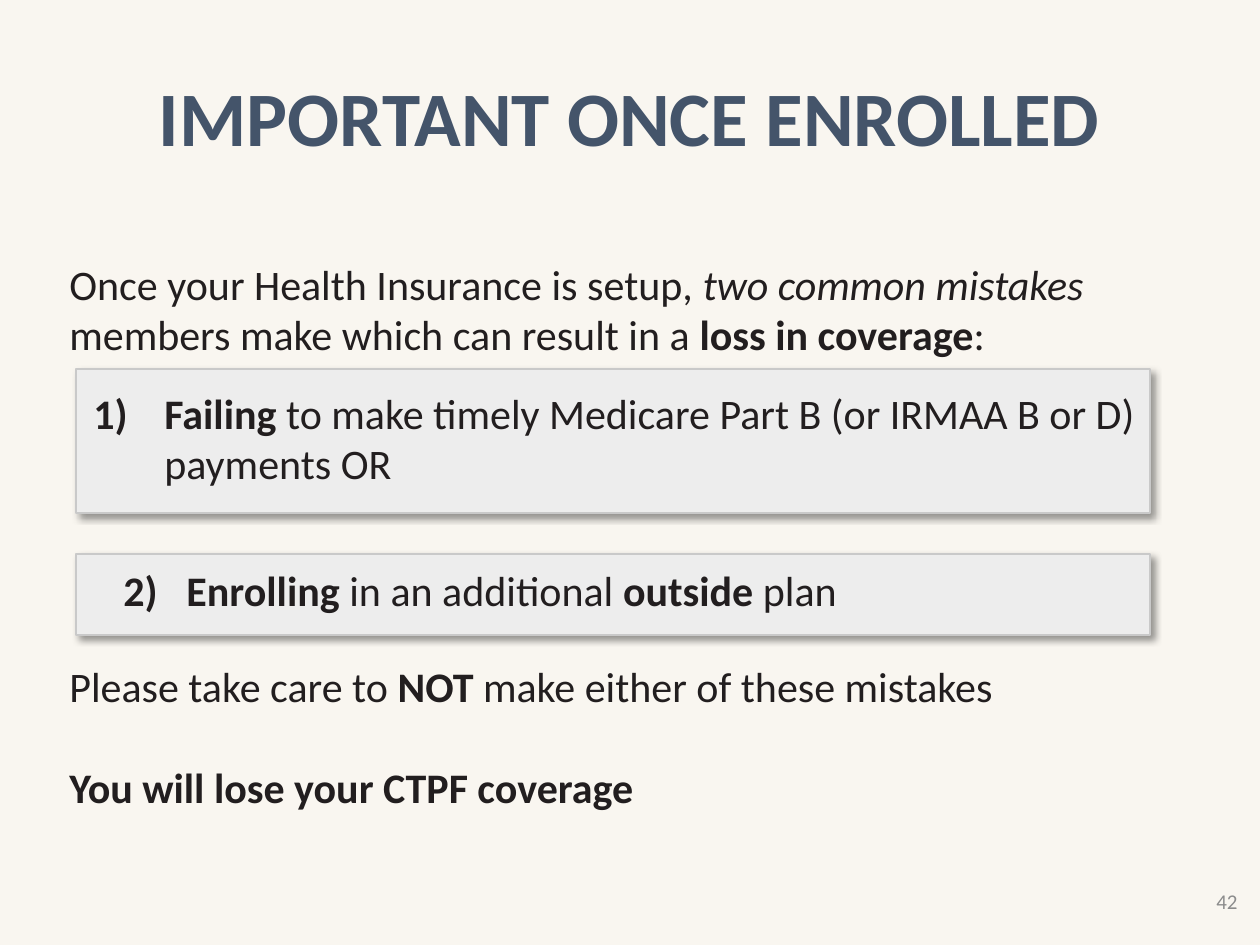
from lxml import etree
from pptx import Presentation
from pptx.dml.color import RGBColor
from pptx.enum.shapes import MSO_SHAPE
from pptx.enum.text import MSO_ANCHOR, PP_ALIGN
from pptx.oxml.ns import qn
from pptx.util import Emu, Pt

RECTANGLE = MSO_SHAPE.RECTANGLE
MIDDLE, TOP = MSO_ANCHOR.MIDDLE, MSO_ANCHOR.TOP
LEFT, CENTER, RIGHT = PP_ALIGN.LEFT, PP_ALIGN.CENTER, PP_ALIGN.RIGHT

PX = 914400 / 126
FONT = "Calibri"
INK = "221E1F"


def px(length):
    return Emu(round(length * PX))


def color(value):
    return RGBColor.from_string(value)


def add_text_frame(slide, box, anchor=TOP):
    frame = slide.shapes.add_textbox(*map(px, box)).text_frame
    frame.word_wrap = True
    frame.vertical_anchor = anchor
    return frame


def fill_paragraph(paragraph, runs, size=24, ink=INK, align=LEFT):
    paragraph.alignment = align
    font = paragraph.font
    font.name, font.size = FONT, Pt(size)
    font.color.rgb = color(ink)
    for text, style in runs:
        run = paragraph.add_run()
        run.text = text
        if style == "bold":
            run.font.bold = True
        elif style == "italic":
            run.font.italic = True


def number_paragraph(paragraph, number, indent):
    properties = paragraph._p.get_or_add_pPr()
    properties.set("marL", str(px(indent)))
    properties.set("indent", str(-px(indent)))
    bullet_font = etree.SubElement(properties, qn("a:buFont"))
    bullet_font.set("typeface", "+mj-lt")
    bullet = etree.SubElement(properties, qn("a:buAutoNum"))
    bullet.set("type", "arabicParenR")
    bullet.set("startAt", str(number))


def add_line_of_text(slide, box, runs, size, ink, align, anchor=TOP):
    frame = add_text_frame(slide, box, anchor)
    fill_paragraph(frame.paragraphs[0], runs, size, ink, align)


def add_body(slide, box, paragraphs):
    frame = add_text_frame(slide, box)
    for index, (space_before, runs) in enumerate(paragraphs):
        paragraph = frame.add_paragraph() if index else frame.paragraphs[0]
        if space_before:
            paragraph.space_before = Pt(space_before)
        fill_paragraph(paragraph, runs)


def add_shadow(shape):
    shape.shadow.inherit = False
    effects = shape._element.spPr.find(qn("a:effectLst"))
    shadow = etree.SubElement(effects, qn("a:outerShdw"))
    for name, value in (("blurRad", Pt(4)), ("dist", Pt(3)), ("dir", 45 * 60000)):
        shadow.set(name, str(value))
    shadow.set("algn", "tl")
    shadow.set("rotWithShape", "0")
    shade = etree.SubElement(shadow, qn("a:srgbClr"))
    shade.set("val", "000000")
    etree.SubElement(shade, qn("a:alpha")).set("val", "40000")


def add_mistake(slide, box, text_offset, text_size, number, indent, runs):
    left, top, width, height = box
    panel = slide.shapes.add_shape(RECTANGLE, *map(px, box))
    panel.fill.solid()
    panel.fill.fore_color.rgb = color("EDEDED")
    panel.line.color.rgb = color("C9C9C9")
    panel.line.width = Pt(1)
    add_shadow(panel)
    text_box = (left + text_offset[0], top + text_offset[1], *text_size)
    paragraph = add_text_frame(slide, text_box).paragraphs[0]
    number_paragraph(paragraph, number, indent)
    fill_paragraph(paragraph, runs)


def main():
    presentation = Presentation()
    presentation.slide_width, presentation.slide_height = px(1260), px(945)
    slide = presentation.slides.add_slide(presentation.slide_layouts[6])
    background = slide.background.fill
    background.solid()
    background.fore_color.rgb = color("F9F6F0")

    add_body(slide, (57, 252, 1172, 572), [
        (0, [("Once your Health Insurance is setup, ", ""),
             ("two common mistakes ", "italic"),
             ("members make which can result in a ", ""),
             ("loss in coverage", "bold"), (":", "")]),
        (172, [("Please take care to ", ""), ("NOT", "bold"),
               (" make either of these mistakes", "")]),
        (29, [("You will lose your CTPF coverage", "bold")]),
    ])
    add_line_of_text(slide, (0, 63, 1260, 106),
                     [("IMPORTANT ONCE ENROLLED", "bold")], 44, "44546A", CENTER)
    add_line_of_text(slide, (966, 876, 284, 50), [("42", "")],
                     12, "8C8C8C", RIGHT, MIDDLE)
    add_mistake(slide, (76, 369, 1074, 144), (5, 12), (1069, 115), 1, 71, [
        ("Failing", "bold"),
        (" to make timely Medicare Part B (or IRMAA B or D) payments OR", "")])
    add_mistake(slide, (76, 554, 1074, 81), (35, 4), (924, 63), 2, 63, [
        ("Enrolling", "bold"), (" in an additional ", ""),
        ("outside", "bold"), (" plan", "")])

    presentation.save("out.pptx")


if __name__ == "__main__":
    main()
